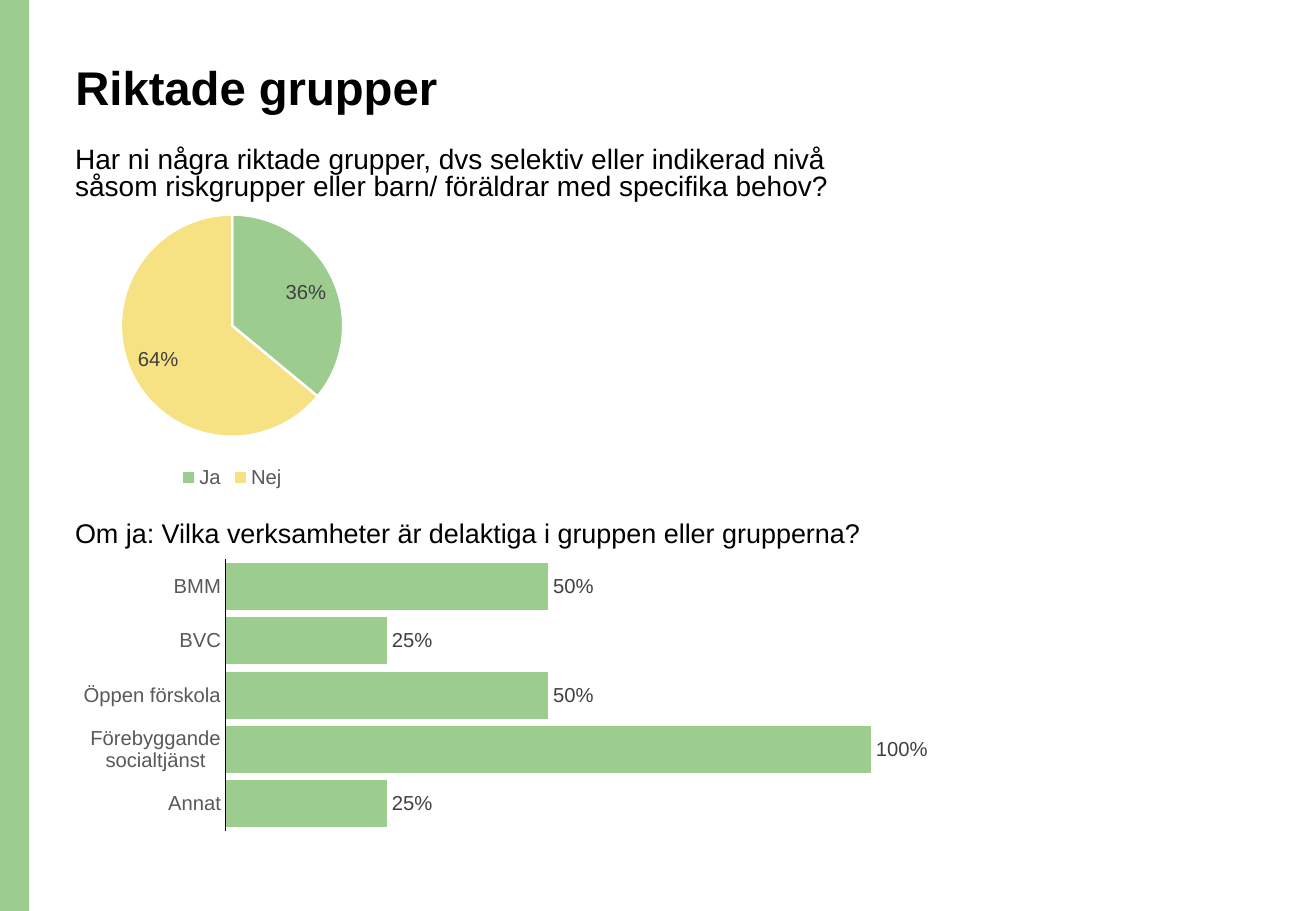
from dataclasses import dataclass

from lxml.etree import SubElement
from pptx import Presentation
from pptx.chart.data import CategoryChartData
from pptx.dml.color import RGBColor
from pptx.enum.chart import XL_CHART_TYPE, XL_LABEL_POSITION, XL_LEGEND_POSITION, XL_TICK_MARK
from pptx.enum.shapes import MSO_SHAPE
from pptx.enum.text import MSO_ANCHOR, MSO_AUTO_SIZE, PP_ALIGN
from pptx.oxml.ns import qn
from pptx.util import Inches, Pt


@dataclass(frozen=True)
class Theme:
    font: str = "Arial"
    green: RGBColor = RGBColor(0x9D, 0xCC, 0x8F)
    yellow: RGBColor = RGBColor(0xF6, 0xE1, 0x83)
    black: RGBColor = RGBColor(0, 0, 0)
    white: RGBColor = RGBColor(0xFF, 0xFF, 0xFF)
    axis_gray: RGBColor = RGBColor(0x59, 0x59, 0x59)
    label_gray: RGBColor = RGBColor(0x40, 0x40, 0x40)
    title_size: float = 28
    question_size: float = 16.6
    follow_up_size: float = 16
    chart_size: float = 12


THEME = Theme()
LEFT = 0.52


def style_font(font, size, color, bold=False):
    font.name = THEME.font
    font.size = Pt(size)
    font.bold = bold
    font.color.rgb = color


def place(shape, box):
    shape.left, shape.top, shape.width, shape.height = map(Inches, box)


def write_text(shape, text, size, line_spacing, bold=False):
    frame = shape.text_frame
    frame.word_wrap = True
    frame.auto_size = MSO_AUTO_SIZE.NONE
    frame.vertical_anchor = MSO_ANCHOR.TOP
    paragraph = frame.paragraphs[0]
    paragraph.alignment = PP_ALIGN.LEFT
    paragraph.line_spacing = line_spacing
    paragraph.space_before = Pt(0)
    run = paragraph.add_run()
    run.text = text
    style_font(run.font, size, THEME.black, bold)


def add_side_band(slide, box):
    band = slide.shapes.add_shape(MSO_SHAPE.RECTANGLE, *map(Inches, box))
    band.shadow.inherit = False
    band.fill.solid()
    band.fill.fore_color.rgb = THEME.green
    band.line.fill.background()


def add_title(slide, box, text):
    title = slide.shapes.title
    place(title, box)
    write_text(title, text, THEME.title_size, 0.9, bold=True)


def add_question(slide, box, text, size, line_spacing):
    question = slide.shapes.add_textbox(*map(Inches, box))
    write_text(question, text, size, line_spacing)


def set_plot_area(chart, fractions):
    """Fix the inner plot area as x, y, w, h fractions of the chart."""
    plot_area = chart.plots[0]._element.getparent()
    for layout in plot_area.findall(qn("c:layout")):
        plot_area.remove(layout)
    layout = SubElement(plot_area, qn("c:layout"))
    plot_area.insert(0, layout)
    manual = SubElement(layout, qn("c:manualLayout"))
    settings = {"layoutTarget": "inner", "xMode": "edge", "yMode": "edge"}
    settings.update(zip("xywh", map(str, fractions)))
    for name, value in settings.items():
        SubElement(manual, qn(f"c:{name}")).set("val", value)


def add_percent_chart(slide, box, chart_type, shares, label_position, plot_fractions):
    data = CategoryChartData(number_format="0%")
    data.categories = list(shares)
    data.add_series("Series 1", list(shares.values()))
    chart = slide.shapes.add_chart(chart_type, *map(Inches, box), data).chart
    chart.has_title = False
    chart.has_legend = False
    style_font(chart.font, THEME.chart_size, THEME.axis_gray)
    plot = chart.plots[0]
    plot.has_data_labels = True
    labels = plot.data_labels
    labels.show_value = True
    labels.show_percentage = False
    labels.number_format = "0%"
    labels.number_format_is_linked = False
    labels.position = label_position
    style_font(labels.font, THEME.chart_size, THEME.label_gray)
    set_plot_area(chart, plot_fractions)
    return chart


def add_answer_pie(slide, box, shares):
    chart = add_percent_chart(slide, box, XL_CHART_TYPE.PIE, shares,
                              XL_LABEL_POSITION.INSIDE_END, (0.17, 0.06, 0.66, 0.75))
    chart.has_legend = True
    chart.legend.position = XL_LEGEND_POSITION.BOTTOM
    chart.legend.include_in_layout = False
    style_font(chart.legend.font, THEME.chart_size, THEME.axis_gray)
    plot = chart.plots[0]
    plot.vary_by_categories = True
    for index, color in enumerate((THEME.green, THEME.yellow)):
        slice_format = plot.series[0].points[index].format
        slice_format.fill.solid()
        slice_format.fill.fore_color.rgb = color
        slice_format.line.color.rgb = THEME.white
        slice_format.line.width = Pt(1.5)


def add_participant_bars(slide, box, shares):
    chart = add_percent_chart(slide, box, XL_CHART_TYPE.BAR_CLUSTERED, shares,
                              XL_LABEL_POSITION.OUTSIDE_END, (0.17, 0.02, 0.81, 0.96))
    plot = chart.plots[0]
    plot.vary_by_categories = False
    plot.gap_width = 15
    bar_fill = plot.series[0].format.fill
    bar_fill.solid()
    bar_fill.fore_color.rgb = THEME.green

    categories = chart.category_axis
    categories.reverse_order = True
    categories.has_major_gridlines = False
    categories.major_tick_mark = XL_TICK_MARK.NONE
    categories.minor_tick_mark = XL_TICK_MARK.NONE
    categories.format.line.color.rgb = THEME.black
    categories.format.line.width = Pt(0.75)
    style_font(categories.tick_labels.font, THEME.chart_size, THEME.axis_gray)

    values = chart.value_axis
    values.minimum_scale = 0
    values.maximum_scale = 1.2
    values.has_major_gridlines = False
    values.visible = False


def build_survey_slide(presentation):
    slide = presentation.slides.add_slide(presentation.slide_layouts[5])
    add_side_band(slide, (0, 0, 0.24, 7.5))
    add_title(slide, (LEFT, 0.48, 9.34, 1.02), "Riktade grupper")
    add_question(
        slide, (LEFT, 1.17, 6.91, 0.57),
        "Har ni några riktade grupper, dvs selektiv eller indikerad nivå "
        "såsom riskgrupper eller barn/ föräldrar med specifika behov?",
        THEME.question_size, 0.8)
    add_answer_pie(slide, (LEFT, 1.62, 2.78, 2.44), {"Ja": 0.36, "Nej": 0.64})
    add_participant_bars(slide, (LEFT, 4.56, 7.87, 2.33), {
        "BMM": 0.5,
        "BVC": 0.25,
        "Öppen förskola": 0.5,
        "Förebyggande socialtjänst": 1,
        "Annat": 0.25,
    })
    add_question(
        slide, (LEFT, 4.23, 8.13, 0.63),
        "Om ja: Vilka verksamheter är delaktiga i gruppen eller grupperna?",
        THEME.follow_up_size, 0.9)


def main():
    presentation = Presentation()
    presentation.slide_width = Inches(10.83)
    presentation.slide_height = Inches(7.5)
    build_survey_slide(presentation)
    presentation.save("out.pptx")


if __name__ == "__main__":
    main()
